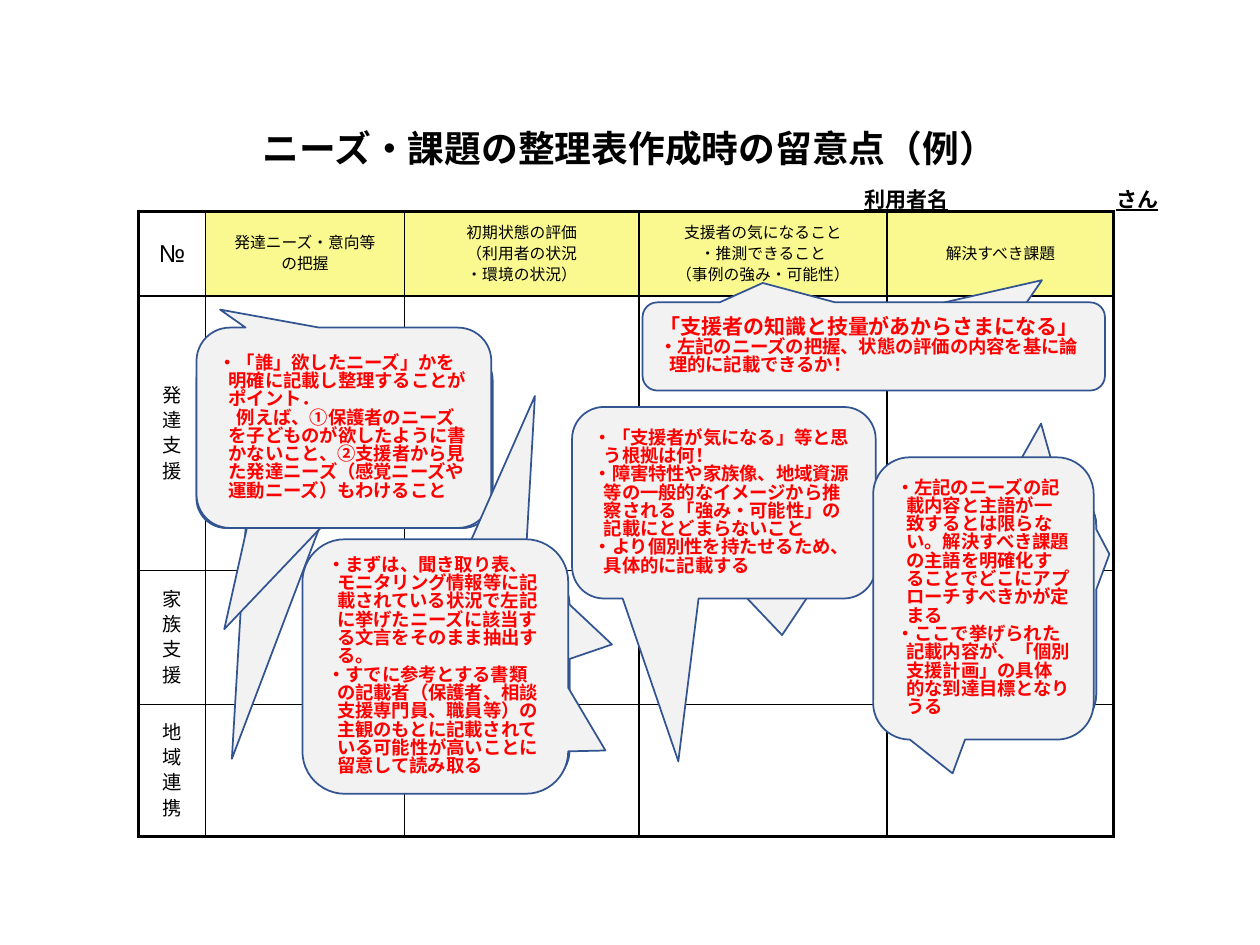
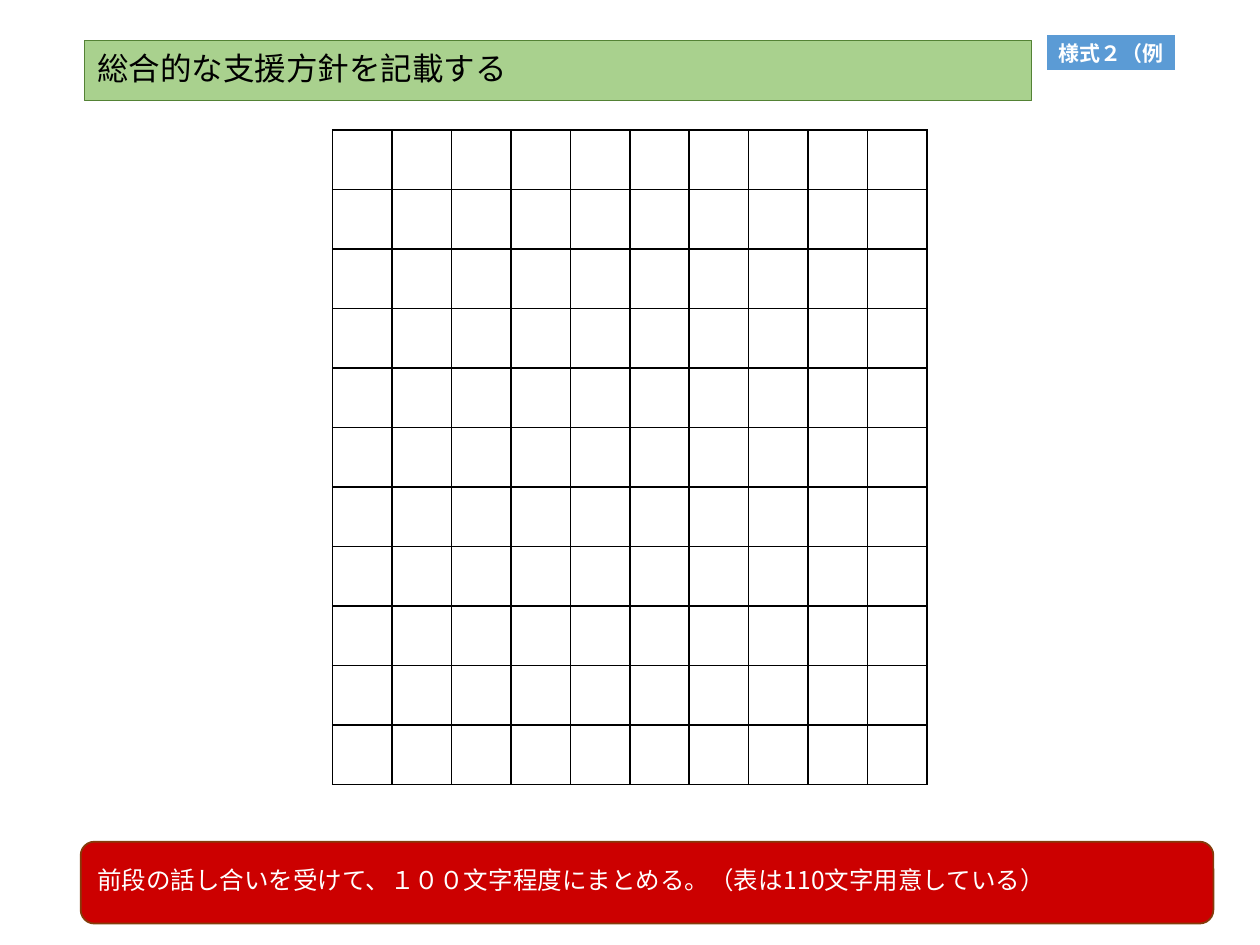
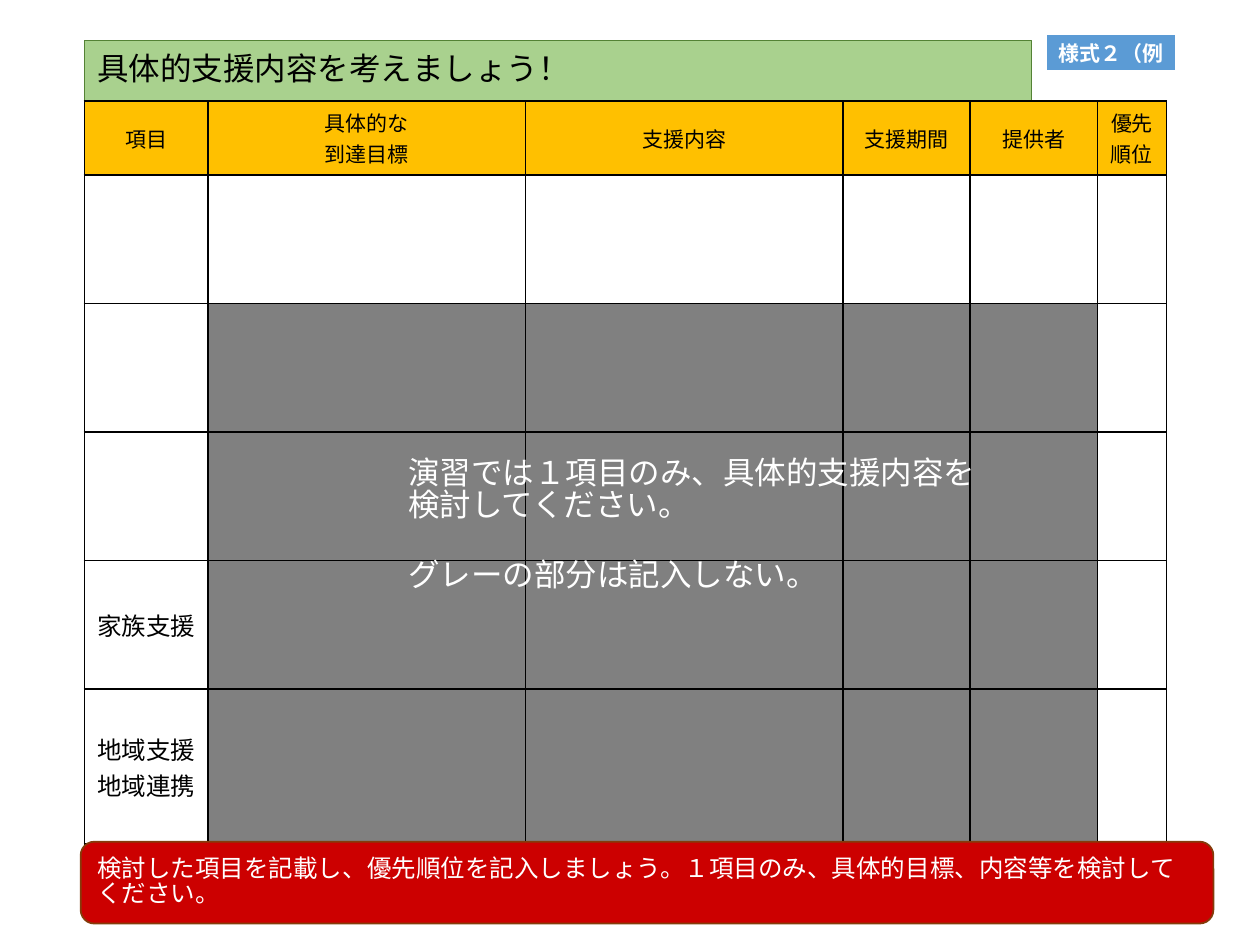
from lxml import etree
from pptx import Presentation
from pptx import util as u
from pptx.dml.color import RGBColor
from pptx.enum import shapes, text
from pptx.oxml.ns import qn

COLORS = {
    "black": "000000", "white": "FFFFFF", "red": "FF0000",
    "callout": "F2F2F2", "callout_line": "325491", "needs_header": "F9F98F",
    "title": "A9D18E", "title_line": "548235", "tag": "5B9BD5",
    "note": "CC0000", "note_line": "843C0B", "plan_header": "FFC000", "unused": "808080",
}
JAPANESE, LATIN, ARIAL = "Noto Sans CJK JP", "Calibri", "Arial"
TIGHT = 0.83
MIDDLE = text.MSO_ANCHOR.MIDDLE
LEFT, CENTER = text.PP_ALIGN.LEFT, text.PP_ALIGN.CENTER
SHAPE = shapes.MSO_SHAPE

CALLOUT_STACKS = [
    {
        "tails": [((1.56, 2.78, 2.34, 1.41), (-0.38, 1.8)), ((1.57, 2.78, 2.34, 1.41), (-0.41, 1.07))],
        "front": ((1.56, 2.6, 2.34, 1.59), (-0.42, -0.59)),
        "lines": [
            "・「誰」欲したニーズ」かを明確に記載し整理することがポイント．",
            "　例えば、①保護者のニーズを子どものが欲したように書かないこと、②支援者から見た発達ニーズ（感覚ニーズや運動ニーズ）もわけること",
        ],
    },
    {
        "tails": [((2.41, 4.51, 2.11, 1.73), (0.37, -1.29)), ((2.41, 4.51, 2.11, 1.73), (0.66, -0.15))],
        "front": ((2.4, 4.28, 2.11, 2.02), (0.64, 0.33)),
        "lines": [
            "・まずは、聞き取り表、モニタリング情報等に記載されている状況で左記に挙げたニーズに該当する文言をそのまま抽出する。",
            "・すでに参考とする書類の記載者（保護者、相談支援専門員、職員等）の主観のもとに記載されている可能性が高いことに留意して読み取る",
        ],
    },
    {
        "tails": [((4.55, 3.39, 2.27, 1.3), (0.55, -0.19)), ((4.55, 3.39, 2.27, 1.3), (0.23, 0.77))],
        "front": ((4.54, 3.23, 2.41, 1.52), (-0.15, 1.35)),
        "lines": [
            "・「支援者が気になる」等と思う根拠は何！",
            "・障害特性や家族像、地域資源等の一般的なイメージから推察される「強み・可能性」の記載にとどまらないこと",
            "・より個別性を持たせるため、具体的に記載する",
        ],
    },
    {
        "tails": [((5.85, 2.41, 2.75, 0.6), (0.38, -0.81))],
        "front": ((5.1, 2.4, 3.67, 0.7), (-0.24, -0.72)),
        "lines": [
            "「支援者の知識と技量があからさまになる」",
            "・左記のニーズの把握、状態の評価の内容を基に論理的に記載できるか！",
        ],
        "first_size": 12,
    },
    {
        "tails": [((6.95, 3.88, 1.75, 1.92), (0.25, -0.77)), ((6.95, 3.88, 1.75, 1.92), (0.56, -0.23))],
        "front": ((6.93, 3.63, 1.75, 2.24), (-0.14, 0.62)),
        "lines": [
            "・左記のニーズの記載内容と主語が一致するとは限らない。解決すべき課題の主語を明確化することでどこにアプローチすべきかが定まる",
            "・ここで挙げられた記載内容が、「個別支援計画」の具体的な到達目標となりうる",
        ],
    },
]


def rgb(name):
    return RGBColor.from_string(COLORS[name])


def box(frame):
    return [u.Inches(value) for value in frame]


def style(paragraph, size, color="black", font=JAPANESE, bold=False, align=LEFT, spacing=None):
    paragraph.alignment = align
    paragraph.line_spacing = spacing
    paragraph.font.size = u.Pt(size)
    paragraph.font.name = font
    paragraph.font.bold = bold
    paragraph.font.color.rgb = rgb(color)
    defaults = paragraph._p.pPr.find(qn("a:defRPr"))
    etree.SubElement(defaults, qn("a:ea")).set("typeface", font)


def write(frame, lines, size, **look):
    frame.text = "\n".join(lines)
    for paragraph in frame.paragraphs:
        style(paragraph, size, **look)


def paint(shape, fill, line, width):
    shape.fill.solid()
    shape.fill.fore_color.rgb = rgb(fill)
    shape.line.color.rgb = rgb(line)
    shape.line.width = u.Pt(width)


def add_box(slide, kind, frame, fill, line, width):
    shape = slide.shapes.add_shape(kind, *box(frame))
    shape.shadow.inherit = False
    paint(shape, fill, line, width)
    shape.text_frame.vertical_anchor = MIDDLE
    return shape


def set_title(slide, frame, wording, size, **look):
    title = slide.shapes.title
    title.left, title.top, title.width, title.height = box(frame)
    title.text_frame.auto_size = text.MSO_AUTO_SIZE.NONE
    title.text_frame.vertical_anchor = MIDDLE
    write(title.text_frame, [wording], size, **look)
    return title


def add_grid(slide, frame, rows, columns, row_heights=(), column_widths=()):
    table = slide.shapes.add_table(rows, columns, *box(frame)).table
    table.first_row = table.horz_banding = False
    for row, height in zip(table.rows, row_heights):
        row.height = u.Inches(height)
    for column, width in zip(table.columns, column_widths):
        column.width = u.Inches(width)
    return table


def rule_cells(table, outer=1):
    last_row, last_column = len(table.rows) - 1, len(table.columns) - 1
    for r in range(last_row + 1):
        for c in range(last_column + 1):
            cell = table.cell(r, c)
            cell.vertical_anchor = MIDDLE
            edges = {"L": c == 0, "R": c == last_column, "T": r == 0, "B": r == last_row}
            for side, on_edge in edges.items():
                line = etree.SubElement(cell._tc.get_or_add_tcPr(), qn(f"a:ln{side}"))
                line.set("w", str(u.Pt(outer if on_edge else 1)))
                fill = etree.SubElement(line, qn("a:solidFill"))
                etree.SubElement(fill, qn("a:srgbClr")).set("val", COLORS["black"])
            cell.fill.background()


def fill_cell(cell, color):
    cell.fill.solid()
    cell.fill.fore_color.rgb = rgb(color)


def write_needs_cell(cell, lines, size, font=ARIAL):
    cell.margin_left = cell.margin_right = u.Inches(0.08)
    cell.margin_top = cell.margin_bottom = u.Inches(0.04)
    write(cell.text_frame, lines, size, font=font, align=CENTER)
    for paragraph in cell.text_frame.paragraphs:
        paragraph.space_before = u.Pt(size * 0.2)


def add_needs_table(slide):
    table = add_grid(slide, (1.1, 1.68, 7.74, 4.96), 4, 5,
                     (0.67, 2.18, 1.06, 1.05), (0.53, 1.58, 1.86, 1.97, 1.8))
    rule_cells(table, outer=2.25)
    write_needs_cell(table.cell(0, 0), ["№"], 14)
    headers = [
        ["発達ニーズ・意向等", "の把握"],
        ["初期状態の評価", "（利用者の状況", "・環境の状況）"],
        ["支援者の気になること", "・推測できること", "（事例の強み・可能性）"],
        ["解決すべき課題"],
    ]
    for column, lines in enumerate(headers, 1):
        write_needs_cell(table.cell(0, column), lines, 9)
        fill_cell(table.cell(0, column), "needs_header")
    for row, label in enumerate(["発達支援", "家族支援", "地域連携"], 1):
        write_needs_cell(table.cell(row, 0), label, 11)


def add_user_name(slide):
    frame = slide.shapes.add_textbox(*box((6.33, 1.34, 3.19, 0.34))).text_frame
    frame.word_wrap = True
    frame.vertical_anchor = text.MSO_ANCHOR.BOTTOM
    frame.margin_left, frame.margin_bottom = u.Inches(0.53), 0
    write(frame, ["利用者名\tさん"], 12, font=LATIN, bold=True)
    paragraph = frame.paragraphs[0]
    paragraph.font.underline = True
    stops = etree.Element(qn("a:tabLst"))
    etree.SubElement(stops, qn("a:tab"), pos=str(u.Inches(2)), algn="l")
    paragraph._p.pPr.find(qn("a:defRPr")).addprevious(stops)


def add_callout(slide, frame, tail):
    shape = add_box(slide, SHAPE.ROUNDED_RECTANGULAR_CALLOUT, frame, "callout", "callout_line", 1)
    shape.adjustments[0], shape.adjustments[1] = tail
    return shape


def add_callout_stack(slide, tails, front, lines, first_size=10.5):
    for frame, tail in tails:
        add_callout(slide, frame, tail)
    frame = add_callout(slide, *front).text_frame
    write(frame, lines, 10.5, color="red", bold=True, spacing=TIGHT)
    frame.paragraphs[0].font.size = u.Pt(first_size)
    for paragraph in frame.paragraphs:
        properties = paragraph._p.pPr
        properties.set("marL", str(u.Inches(0.08)))
        properties.set("indent", str(u.Inches(-0.08)))


def add_worksheet_slide(presentation, title):
    slide = presentation.slides.add_slide(presentation.slide_layouts[5])
    bar = set_title(slide, (0.67, 0.32, 7.52, 0.48), title, 18, spacing=0.9)
    paint(bar, "title", "title_line", 0.5)
    return slide


def add_tag_and_note(slide, note):
    tag = add_box(slide, SHAPE.RECTANGLE, (8.3, 0.27, 1.04, 0.3), "tag", "white", 1.5)
    tag.text_frame.word_wrap = False
    write(tag.text_frame, ["様式２（例"], 12, color="white", font=LATIN, bold=True)
    band = add_box(slide, SHAPE.ROUNDED_RECTANGLE, (0.64, 6.68, 8.99, 0.65), "note", "note_line", 1)
    write(band.text_frame, [note], 14, color="white", spacing=TIGHT)


def add_plan_table(slide):
    table = add_grid(slide, (0.67, 0.8, 8.59, 5.9), 6, 6,
                     (0.59, 1.02, 1.02, 1.02, 1.02, 1.23), (0.98, 2.52, 2.52, 1.01, 1.01, 0.55))
    rule_cells(table)
    headers = [["項目"], ["具体的な", "到達目標"], ["支援内容"], ["支援期間"], ["提供者"], ["優先順位"]]
    for column, lines in enumerate(headers):
        write(table.cell(0, column).text_frame, lines, 12, align=CENTER)
        fill_cell(table.cell(0, column), "plan_header")
    for row in range(2, 6):
        for column in range(1, 5):
            fill_cell(table.cell(row, column), "unused")
    for row, lines in {4: ["家族支援"], 5: ["地域支援", "地域連携"]}.items():
        write(table.cell(row, 0).text_frame, lines, 14, align=CENTER)


def add_exercise_hint(slide):
    frame = slide.shapes.add_textbox(*box((3.14, 3.6, 4.84, 1.31))).text_frame
    frame.word_wrap = True
    write(frame, ["演習では１項目のみ、具体的支援内容を検討してください。", "グレーの部分は記入しない。"],
          18, color="white", spacing=TIGHT)
    frame.paragraphs[1].space_before = u.Pt(22)


def main():
    presentation = Presentation()
    presentation.slide_width, presentation.slide_height = u.Inches(10), u.Inches(7.5)

    needs = presentation.slides.add_slide(presentation.slide_layouts[5])
    add_needs_table(needs)
    set_title(needs, (1.86, 0.94, 6.27, 0.47), "ニーズ・課題の整理表作成時の留意点（例）", 21,
              font=LATIN, bold=True, align=CENTER)
    add_user_name(needs)
    for stack in CALLOUT_STACKS:
        add_callout_stack(needs, **stack)

    policy = add_worksheet_slide(presentation, "総合的な支援方針を記載する")
    add_grid_table = add_grid(policy, (2.64, 1.03, 4.72, 5.2), 11, 10)
    rule_cells(add_grid_table)
    add_tag_and_note(policy, "前段の話し合いを受けて、１００文字程度にまとめる。（表は110文字用意している）")

    plan = add_worksheet_slide(presentation, "具体的支援内容を考えましょう！")
    add_plan_table(plan)
    add_tag_and_note(plan, "検討した項目を記載し、優先順位を記入しましょう。１項目のみ、具体的目標、内容等を検討してください。")
    add_exercise_hint(plan)

    presentation.save("out.pptx")


if __name__ == "__main__":
    main()
